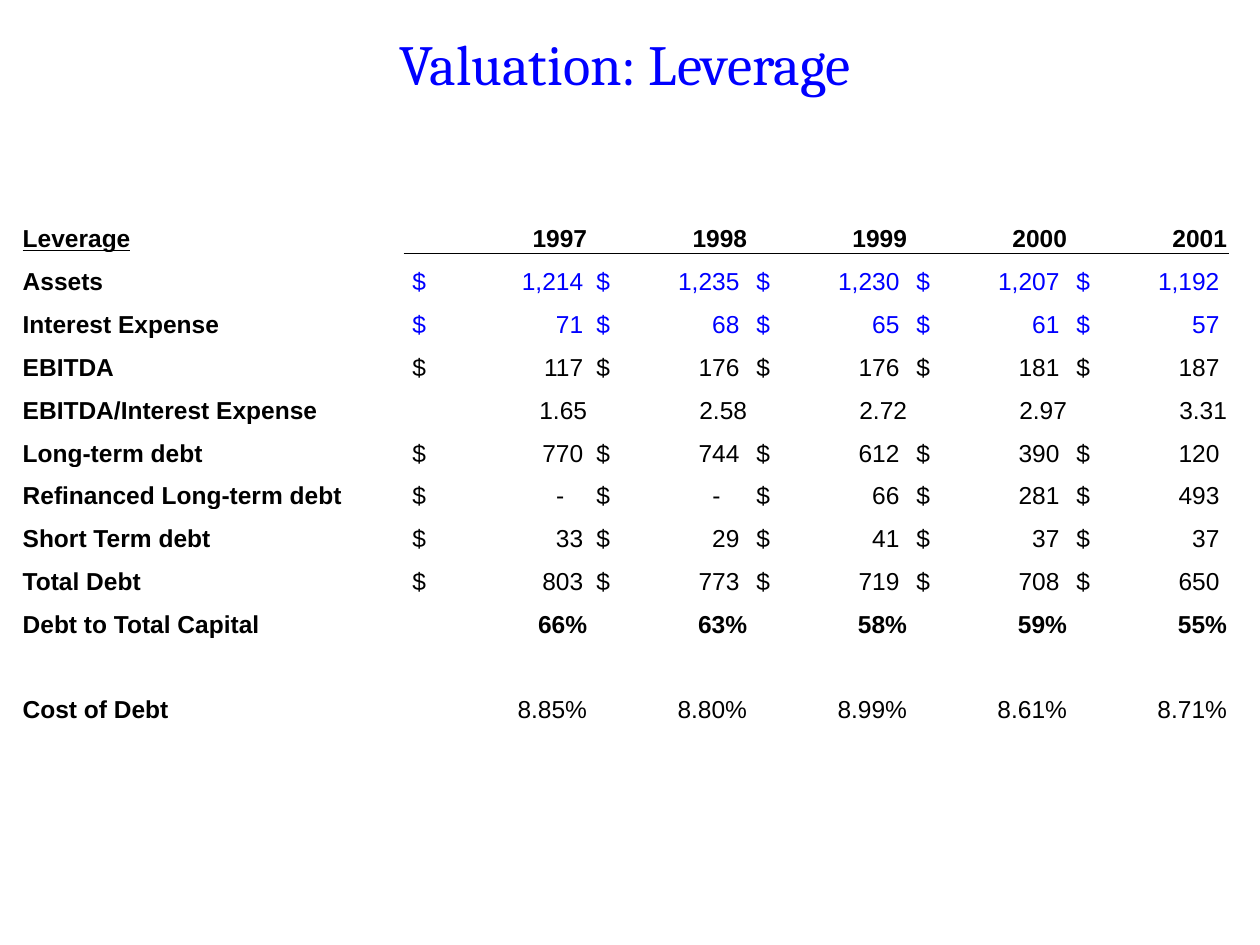
from lxml.etree import SubElement
from pptx import Presentation
from pptx.dml.color import RGBColor
from pptx.enum.text import MSO_ANCHOR as Anchor, PP_ALIGN as Align
from pptx.oxml import parse_xml
from pptx.oxml.ns import nsdecls, qn
from pptx.util import Inches, Pt

BLUE = RGBColor(0x00, 0x00, 0xFF)
BLACK = RGBColor(0x00, 0x00, 0x00)

COLUMNS = [2.9, 0.14, 1.46] + [1.27] * 4
ROW_HEIGHT = 0.34
FIRST_YEAR = 2
TAB_GAP = {FIRST_YEAR: 0.05}
DEFAULT_GAP = 0.08
DASH_GAP = 0.15

ROWS = [
    ("Leverage", "header", "1997 1998 1999 2000 2001"),
    ("Assets", "input", "1,214 1,235 1,230 1,207 1,192"),
    ("Interest Expense", "input", "71 68 65 61 57"),
    ("EBITDA", "money", "117 176 176 181 187"),
    ("EBITDA/Interest Expense", "ratio", "1.65 2.58 2.72 2.97 3.31"),
    ("Long-term debt", "money", "770 744 612 390 120"),
    ("Refinanced Long-term debt", "money", "- - 66 281 493"),
    ("Short Term debt", "money", "33 29 41 37 37"),
    ("Total Debt", "money", "803 773 719 708 650"),
    ("Debt to Total Capital", "total", "66% 63% 58% 59% 55%"),
    ("", "ratio", ""),
    ("Cost of Debt", "ratio", "8.85% 8.80% 8.99% 8.61% 8.71%"),
]


def write(para, text, **formats):
    span = para.add_run()
    span.text = text
    color = formats.pop("color", BLACK)
    for name, value in formats.items():
        setattr(span.font, name, value)
    span.font.color.rgb = color


def add_rule(cell, side):
    cell.fill.background()
    line = parse_xml(
        f'<a:{side} {nsdecls("a")} w="6350"><a:solidFill>'
        f'<a:srgbClr val="{BLACK}"/></a:solidFill></a:{side}>'
    )
    cell.fill._xPr.insert(0, line)


deck = Presentation()
deck.slide_width, deck.slide_height = Inches(10), Inches(7.5)
page = deck.slides.add_slide(deck.slide_layouts[5])

title = page.shapes.title
title.left, title.top = Inches(0.25), Inches(0.33)
title.width, title.height = Inches(9.42), Inches(0.5)
frame = title.text_frame
frame_format = {
    "vertical_anchor": Anchor.BOTTOM,
    "margin_left": Inches(0.12),
    "margin_right": Inches(0.12),
    "margin_top": Inches(0.06),
    "margin_bottom": Inches(0.06),
}
for name, value in frame_format.items():
    setattr(frame, name, value)
frame.paragraphs[0].alignment = Align.CENTER
write(frame.paragraphs[0], "Valuation: Leverage", name="Cambria", size=Pt(32.4), color=BLUE)

table = page.shapes.add_table(
    len(ROWS), len(COLUMNS), Inches(0.17), Inches(1.67),
    Inches(sum(COLUMNS)), Inches(ROW_HEIGHT * len(ROWS)),
).table
table.first_row = table.horz_banding = False
for column, width in zip(table.columns, COLUMNS):
    column.width = Inches(width)

cell_format = {
    "vertical_anchor": Anchor.BOTTOM,
    "margin_left": Inches(0.01),
    "margin_right": Inches(0.01),
    "margin_top": Inches(0.01),
    "margin_bottom": 0,
}
for row, (label, kind, figures) in enumerate(ROWS):
    table.rows[row].height = Inches(ROW_HEIGHT)
    texts = [label, ""] + figures.split()
    for column, width in enumerate(COLUMNS):
        cell = table.cell(row, column)
        for name, value in cell_format.items():
            setattr(cell, name, value)
        cell.fill.background()
        if column >= FIRST_YEAR and row < 2:
            add_rule(cell, "lnB" if row == 0 else "lnT")
        text = texts[column] if column < len(texts) else ""
        if not text:
            continue
        para = cell.text_frame.paragraphs[0]
        is_label = column == 0
        if not is_label and kind in ("input", "money"):
            gap = TAB_GAP.get(column, DEFAULT_GAP) + (DASH_GAP if text == "-" else 0)
            stops = SubElement(para._p.get_or_add_pPr(), qn("a:tabLst"))
            SubElement(stops, qn("a:tab"), pos=str(Inches(width - gap)), algn="r")
            text = f" $\t{text}"
        elif not is_label:
            para.alignment = Align.RIGHT
        write(
            para, text, name="Arial", size=Pt(14),
            bold=is_label or kind in ("header", "total"),
            underline=is_label and kind == "header",
            color=BLUE if kind == "input" and not is_label else BLACK,
        )

deck.save("out.pptx")
